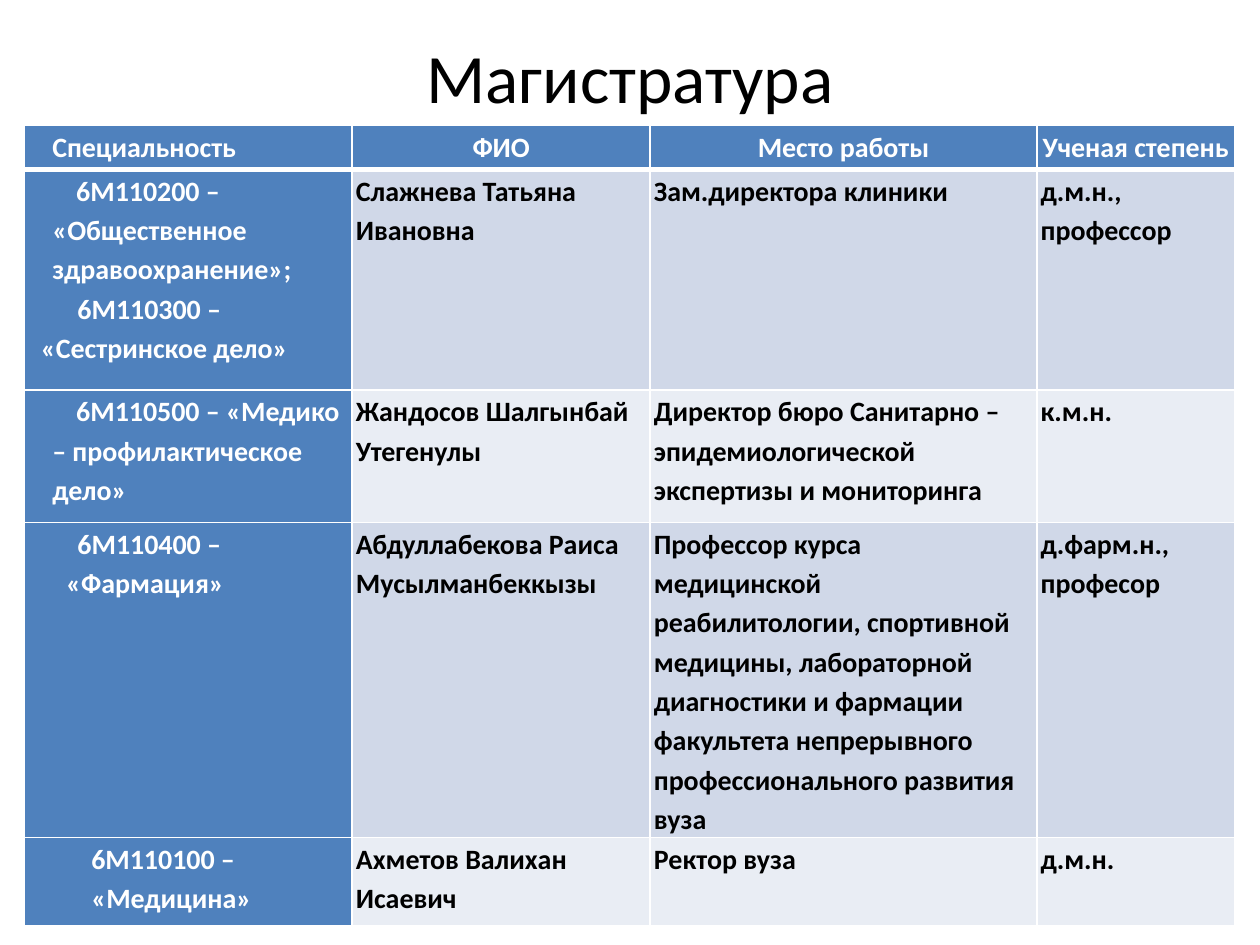
from dataclasses import dataclass

from lxml.etree import SubElement
from pptx import Presentation
from pptx.dml.color import RGBColor as Rgb
from pptx.enum.text import MSO_ANCHOR as Anchor, PP_ALIGN as Align
from pptx.oxml.ns import qn
from pptx.util import Emu, Inches, Pt

SLIDE_WIDTH, SLIDE_HEIGHT = Inches(10), Inches(7.5)


@dataclass(frozen=True)
class Theme:
    font: str = "Calibri"
    title_size: float = 39.6
    table_size: float = 16
    line_spacing: float = 1.15
    accent: str = "4F81BD"
    bands: tuple[str, str] = ("D0D8E8", "E9EDF4")
    dark: str = "000000"
    light: str = "FFFFFF"
    border: float = 1
    header_border: float = 3


@dataclass(frozen=True)
class Line:
    """A cell paragraph; margin and first-line indent are in grid units."""
    text: str
    margin: float = 0
    indent: float = 0
    align: Align = Align.LEFT


@dataclass(frozen=True)
class Row:
    height: float
    cells: tuple[tuple[Line, ...], ...]


THEME = Theme()
COLUMNS = (26, 23.65, 30.7, 15.7)
ROWS = (
    Row(3.5, (
        (Line("Специальность", 1.9),),
        (Line("ФИО", align=Align.CENTER),),
        (Line("Место работы", align=Align.CENTER),),
        (Line("Ученая степень", 3, -3, Align.CENTER),),
    )),
    Row(17.5, (
        (Line("6М110200 – «Общественное здравоохранение»;", 1.9, 1.9),
         Line("6М110300 – «Сестринское дело»", 1, 2.9)),
        (Line("Слажнева Татьяна Ивановна"),),
        (Line("Зам.директора клиники"),),
        (Line("д.м.н.,", 5, -5), Line("профессор", 5, -5)),
    )),
    Row(10.5, (
        (Line("6М110500 – «Медико – профилактическое дело»", 1.9, 1.9),),
        (Line("Жандосов Шалгынбай Утегенулы"),),
        (Line("Директор бюро Санитарно – эпидемиологической экспертизы и мониторинга"),),
        (Line("к.м.н."),),
    )),
    Row(25, (
        (Line("6М110400 – «Фармация»", 3, 0.9),),
        (Line("Абдуллабекова Раиса Мусылманбеккызы"),),
        (Line("Профессор курса медицинской реабилитологии, спортивной медицины, "
              "лабораторной диагностики и фармации факультета непрерывного "
              "профессионального развития вуза"),),
        (Line("д.фарм.н., професор"),),
    )),
    Row(7, (
        (Line("6М110100 – «Медицина»", 5),),
        (Line("Ахметов Валихан Исаевич"),),
        (Line("Ректор вуза"),),
        (Line("д.м.н.", 5, -5),),
    )),
)


def grid(units: float) -> Emu:
    """Length of grid units, each a hundredth of the slide's width."""
    return Emu(round(SLIDE_WIDTH * units / 100))


def style_font(para, size: float, color: str, bold: bool = False) -> None:
    font = para.font
    font.name, font.size, font.bold = THEME.font, Pt(size), bold
    font.color.rgb = Rgb.from_string(color)


def add_title(slide, text: str) -> None:
    box = slide.shapes.add_textbox(grid(5), grid(2.7), grid(90), grid(12.5))
    frame = box.text_frame
    frame.word_wrap = True
    frame.vertical_anchor = Anchor.TOP
    frame.margin_top = 0
    para = frame.paragraphs[0]
    para.text, para.alignment = text, Align.CENTER
    style_font(para, THEME.title_size, THEME.dark)


def set_borders(cell, top: float, bottom: float) -> None:
    properties = cell._tc.get_or_add_tcPr()
    widths = {"L": THEME.border, "R": THEME.border, "T": top, "B": bottom}
    for side, width in widths.items():
        border = SubElement(properties, qn(f"a:ln{side}"), w=str(Pt(width)))
        fill = SubElement(border, qn("a:solidFill"))
        SubElement(fill, qn("a:srgbClr"), val=THEME.light)


def fill_cell(cell, lines: tuple[Line, ...], fill: str, color: str) -> None:
    cell.margin_left = cell.margin_right = grid(0.3)
    cell.margin_top = cell.margin_bottom = 0
    cell.fill.solid()
    cell.fill.fore_color.rgb = Rgb.from_string(fill)
    frame = cell.text_frame
    for index, line in enumerate(lines):
        para = frame.add_paragraph() if index else frame.paragraphs[0]
        para.text, para.alignment = line.text, line.align
        para.line_spacing = THEME.line_spacing
        style_font(para, THEME.table_size, color, bold=True)
        properties = para._p.get_or_add_pPr()
        properties.set("marL", str(grid(line.margin)))
        properties.set("indent", str(grid(line.indent)))


def add_staff_table(slide) -> None:
    height = sum(row.height for row in ROWS)
    table = slide.shapes.add_table(
        len(ROWS), len(COLUMNS), grid(1.95), grid(9.95), grid(sum(COLUMNS)), grid(height)
    ).table
    for column, width in zip(table.columns, COLUMNS):
        column.width = grid(width)
    for r, row in enumerate(ROWS):
        table.rows[r].height = grid(row.height)
        top = THEME.header_border if r == 1 else THEME.border
        bottom = THEME.header_border if r == 0 else THEME.border
        for c, lines in enumerate(row.cells):
            cell = table.cell(r, c)
            heading = r == 0 or c == 0
            fill = THEME.accent if heading else THEME.bands[(r - 1) % 2]
            set_borders(cell, top, bottom)
            fill_cell(cell, lines, fill, THEME.light if heading else THEME.dark)


def main() -> None:
    deck = Presentation()
    deck.slide_width, deck.slide_height = SLIDE_WIDTH, SLIDE_HEIGHT
    slide = deck.slides.add_slide(deck.slide_layouts[6])
    add_title(slide, "Магистратура")
    add_staff_table(slide)
    deck.save("out.pptx")


if __name__ == "__main__":
    main()
